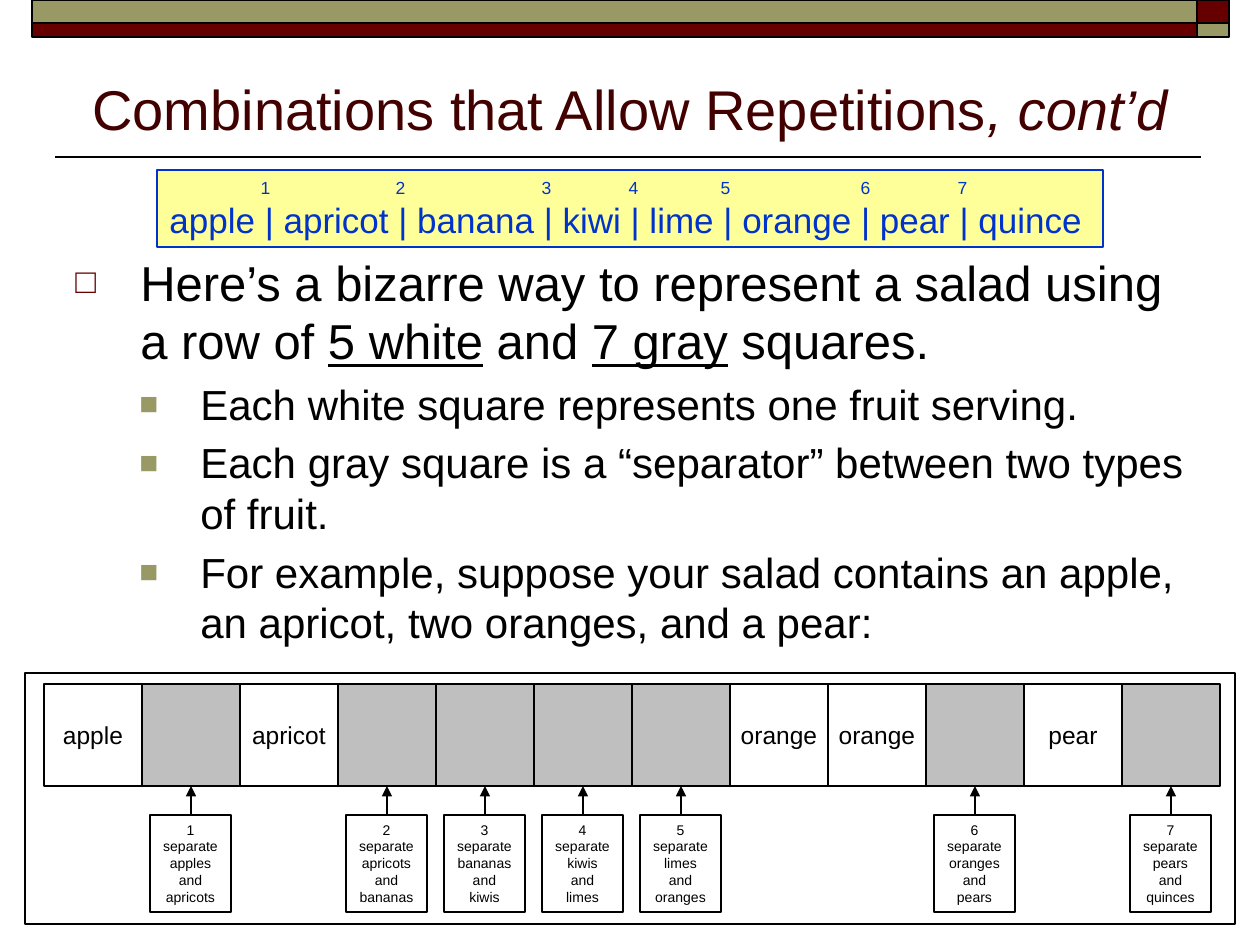
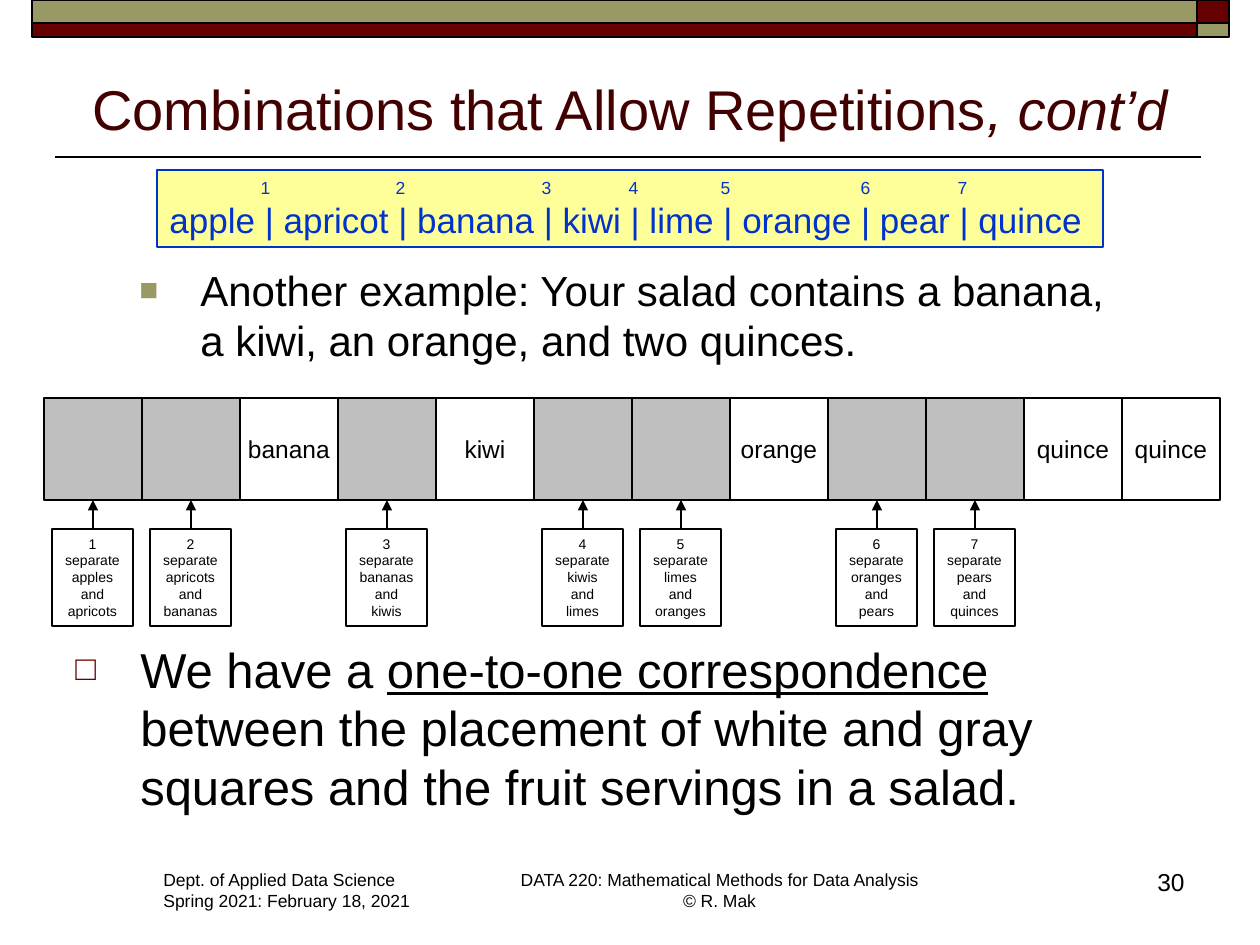
from collections import Counter
from dataclasses import dataclass
from itertools import pairwise

from lxml.etree import SubElement
from pptx import Presentation
from pptx.dml.color import RGBColor
from pptx.enum.shapes import MSO_CONNECTOR, MSO_SHAPE
from pptx.enum.text import MSO_ANCHOR, PP_ALIGN
from pptx.oxml.ns import qn
from pptx.util import Emu, Pt

FONT = "Arial"
BLACK, WHITE, GRAY = "000000", "FFFFFF", "BFBFBF"
MAROON, DARK_MAROON, OLIVE = "660000", "420000", "999966"
BLUE, YELLOW = "0033CC", "FFFF99"

FRUITS = ["apple", "apricot", "banana", "kiwi", "lime", "orange", "pear", "quince"]
SEPARATOR_TABS = [96, 231, 377, 464, 556, 696, 793]

CELL_LEFT, CELL_W, CELL_H = 44, 98, 102
CALLOUT_W, CALLOUT_H, CALLOUT_DROP = 81, 97, 131


@dataclass(frozen=True)
class Box:
    left: int
    top: int
    width: int
    height: int


@dataclass(frozen=True)
class Run:
    text: str
    underline: bool = False
    italic: bool = False


@dataclass(frozen=True)
class Level:
    size: int
    margin: int
    hanging: int
    bullet: str
    bullet_color: str
    bullet_percent: int


@dataclass(frozen=True)
class Point:
    level: Level
    runs: tuple[Run, ...]


MAIN = Level(28, 65, 65, "□", MAROON, 70)
SUB = Level(24, 125, 61, "■", OLIVE, 75)

BANDS = [
    (Box(1197, 0, 32, 23), MAROON),
    (Box(32, 0, 1165, 23), OLIVE),
    (Box(32, 23, 1165, 14), MAROON),
    (Box(1197, 23, 32, 14), OLIVE),
]


def px(n: float) -> Emu:
    """Convert px, 126 to the inch, to EMU."""
    return Emu(round(n * 914400 / 126))


def rgb(color: str) -> RGBColor:
    return RGBColor.from_string(color)


def add_run(p, run: Run, size: float, color: str) -> None:
    r = p.add_run()
    r.text = run.text
    r.font.name, r.font.size = FONT, Pt(size)
    r.font.color.rgb = rgb(color)
    if run.underline:
        r.font.underline = True
    if run.italic:
        r.font.italic = True


def write_lines(tf, lines: list[str], size: float, align=PP_ALIGN.LEFT,
                color: str = BLACK) -> None:
    for i, line in enumerate(lines):
        p = tf.add_paragraph() if i else tf.paragraphs[0]
        p.alignment = align
        add_run(p, Run(line), size, color)


def add_rect(s, box: Box, fill: str | None = None, line: str = BLACK,
             weight: float = 0.75):
    sp = s.shapes.add_shape(MSO_SHAPE.RECTANGLE, px(box.left), px(box.top),
                            px(box.width), px(box.height))
    sp.shadow.inherit = False
    if fill:
        sp.fill.solid()
        sp.fill.fore_color.rgb = rgb(fill)
    else:
        sp.fill.background()
    sp.line.color.rgb = rgb(line)
    sp.line.width = Pt(weight)
    return sp


def add_text(s, box: Box, wrap: bool = True):
    sp = s.shapes.add_textbox(px(box.left), px(box.top), px(box.width), px(box.height))
    sp.text_frame.word_wrap = wrap
    return sp.text_frame


def add_line(s, start: tuple[int, int], end: tuple[int, int], weight: float,
             arrow: bool = False) -> None:
    c = s.shapes.add_connector(MSO_CONNECTOR.STRAIGHT, px(start[0]), px(start[1]),
                               px(end[0]), px(end[1]))
    c.line.color.rgb = rgb(BLACK)
    c.line.width = Pt(weight)
    if arrow:
        SubElement(c.line._get_or_add_ln(), qn("a:tailEnd"), type="triangle")
    SubElement(c._element.spPr, qn("a:effectLst"))


def add_points(s, box: Box, points: list[Point]) -> None:
    tf = add_text(s, box)
    for i, point in enumerate(points):
        p = tf.add_paragraph() if i else tf.paragraphs[0]
        level = point.level
        pPr = p._p.get_or_add_pPr()
        pPr.set("marL", str(px(level.margin)))
        pPr.set("indent", str(-px(level.hanging)))
        SubElement(SubElement(pPr, qn("a:buClr")), qn("a:srgbClr"), val=level.bullet_color)
        SubElement(pPr, qn("a:buSzPct"), val=str(level.bullet_percent * 1000))
        SubElement(pPr, qn("a:buFont"), typeface=FONT)
        SubElement(pPr, qn("a:buChar"), char=level.bullet)
        if i:
            p.space_before = Pt(level.size * 0.2)
        for run in point.runs:
            add_run(p, run, level.size, BLACK)


def add_fruit_key(s) -> None:
    """Yellow box listing the fruits, with a number above each separator."""
    tf = add_rect(s, Box(157, 170, 946, 77), YELLOW, BLUE).text_frame
    tf.word_wrap = True
    tf.margin_right = 0
    numbers = "".join(f"\t{n}" for n in range(1, len(FRUITS)))
    write_lines(tf, [numbers, " | ".join(FRUITS)], 10, color=BLUE)
    tf.paragraphs[1].runs[0].font.size = Pt(20)
    tabs = SubElement(tf.paragraphs[0]._p.get_or_add_pPr(), qn("a:tabLst"))
    for x in SEPARATOR_TABS:
        SubElement(tabs, qn("a:tab"), pos=str(px(x)), algn="ctr")


def add_callout(s, cell: Box, number: int, before: str, after: str) -> None:
    top = cell.top + CALLOUT_DROP
    box = Box(cell.left + (CELL_W - CALLOUT_W) // 2, top, CALLOUT_W, CALLOUT_H)
    tf = add_rect(s, box).text_frame
    tf.word_wrap = False
    tf.vertical_anchor = MSO_ANCHOR.TOP
    lines = [str(number), "separate", f"{before}s", "and", f"{after}s"]
    write_lines(tf, lines, 8, PP_ALIGN.CENTER)
    x = cell.left + CELL_W // 2
    add_line(s, (x, top), (x, cell.top + CELL_H), 0.75, arrow=True)


def add_salad_row(s, top: int, salad: list[str]) -> None:
    """White cells for the servings, gray cells where the fruit changes."""
    servings = Counter(salad)
    column = 0

    def next_cell() -> Box:
        nonlocal column
        column += 1
        return Box(CELL_LEFT + (column - 1) * CELL_W, top, CELL_W, CELL_H)

    for number, (fruit, following) in enumerate(pairwise(FRUITS + [""]), 1):
        for _ in range(servings[fruit]):
            tf = add_rect(s, next_cell()).text_frame
            tf.word_wrap = False
            tf.vertical_anchor = MSO_ANCHOR.MIDDLE
            write_lines(tf, [fruit], 14, PP_ALIGN.CENTER)
        if following:
            cell = next_cell()
            add_rect(s, cell, GRAY)
            add_callout(s, cell, number, fruit, following)


def add_base_slide(prs):
    """Blank slide with the bands, the title, its rule and the fruit key."""
    s = prs.slides.add_slide(prs.slide_layouts[6])
    add_line(s, (1201, 157), (55, 157), 1)
    for box, color in BANDS:
        add_rect(s, box, color, weight=1)
    tf = add_text(s, Box(63, 57, 1134, 91))
    tf.vertical_anchor = MSO_ANCHOR.BOTTOM
    p = tf.paragraphs[0]
    p.alignment = PP_ALIGN.CENTER
    for run in (Run("Combinations that Allow Repetitions"), Run(", cont’d", italic=True)):
        add_run(p, run, 32, DARK_MAROON)
    add_fruit_key(s)
    return s


def add_footer(s, number: int) -> None:
    write_lines(add_text(s, Box(151, 863, 273, 55), wrap=False),
                ["Dept. of Applied Data Science", "Spring 2021: February 18, 2021"], 10)
    write_lines(add_text(s, Box(504, 863, 431, 55), wrap=False),
                ["DATA 220: Mathematical Methods for Data Analysis", "© R. Mak"],
                10, PP_ALIGN.CENTER)
    write_lines(add_text(s, Box(1096, 861, 101, 63)), [str(number)], 14, PP_ALIGN.RIGHT)


def build_first_example(prs) -> None:
    s = add_base_slide(prs)
    add_points(s, Box(63, 246, 1147, 416), [
        Point(MAIN, (
            Run("Here’s a bizarre way to represent a salad using a row of "),
            Run("5 white", underline=True),
            Run(" and "),
            Run("7 gray", underline=True),
            Run(" squares."),
        )),
        Point(SUB, (Run("Each white square represents one fruit serving."),)),
        Point(SUB, (Run("Each gray square is a “separator” between two types of fruit."),)),
        Point(SUB, (Run("For example, suppose your salad contains an apple, "
                        "an apricot, two oranges, and a pear:"),)),
    ])
    add_rect(s, Box(25, 673, 1210, 251), WHITE)
    add_salad_row(s, 684, ["apple", "apricot", "orange", "orange", "pear"])


def build_second_example(prs) -> None:
    s = add_base_slide(prs)
    add_points(s, Box(63, 258, 1072, 120), [
        Point(SUB, (Run("Another example: Your salad contains a banana, "
                        "a kiwi, an orange, and two quinces."),)),
    ])
    add_salad_row(s, 398, ["banana", "kiwi", "orange", "quince", "quince"])
    add_points(s, Box(63, 633, 1072, 200), [
        Point(MAIN, (
            Run("We have a "),
            Run("one-to-one correspondence ", underline=True),
            Run("between the placement of white and gray squares "
                "and the fruit servings in a salad."),
        )),
    ])
    add_footer(s, 30)


def main() -> None:
    prs = Presentation()
    prs.slide_width, prs.slide_height = px(1260), px(945)
    build_first_example(prs)
    build_second_example(prs)
    prs.save("out.pptx")


if __name__ == "__main__":
    main()
